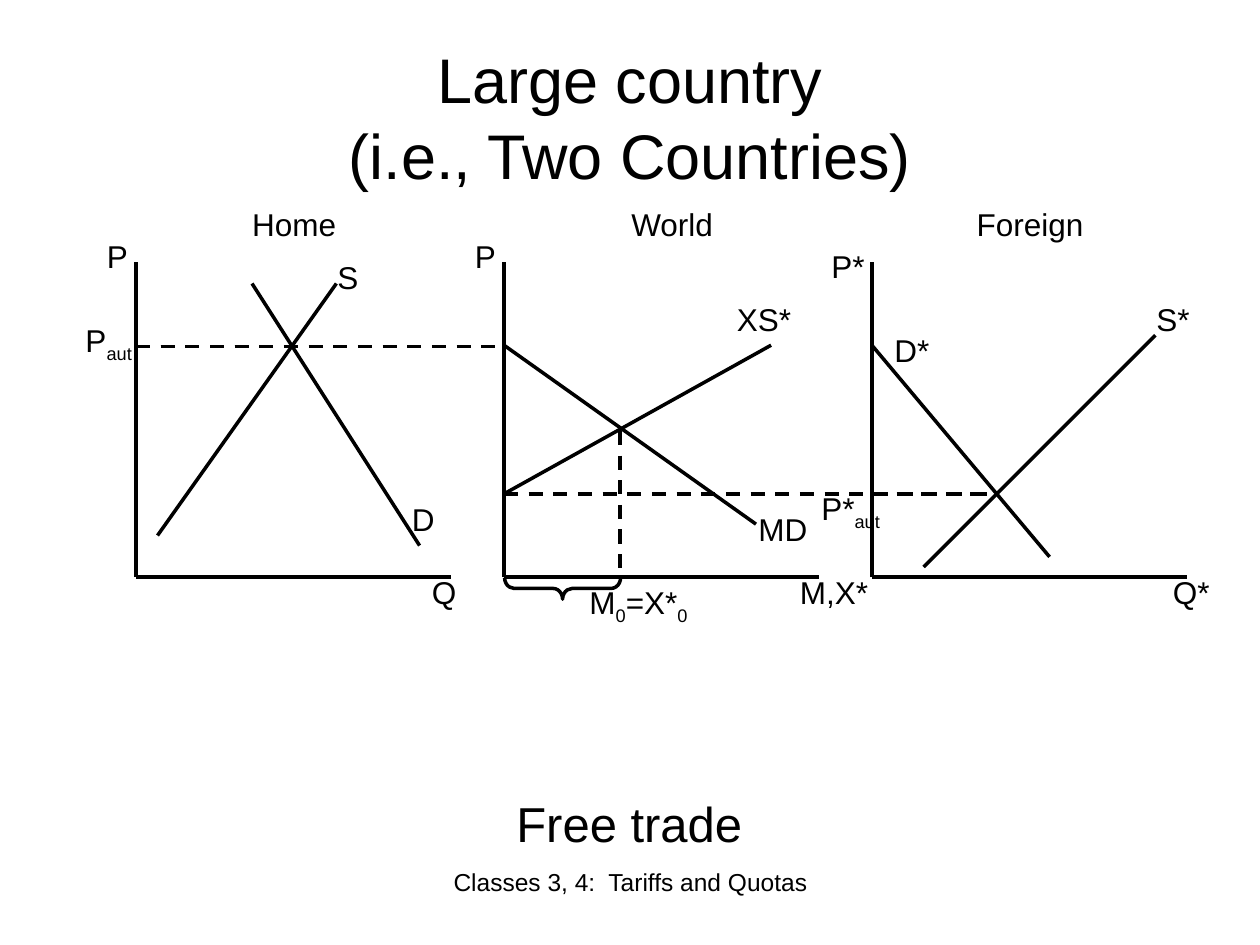
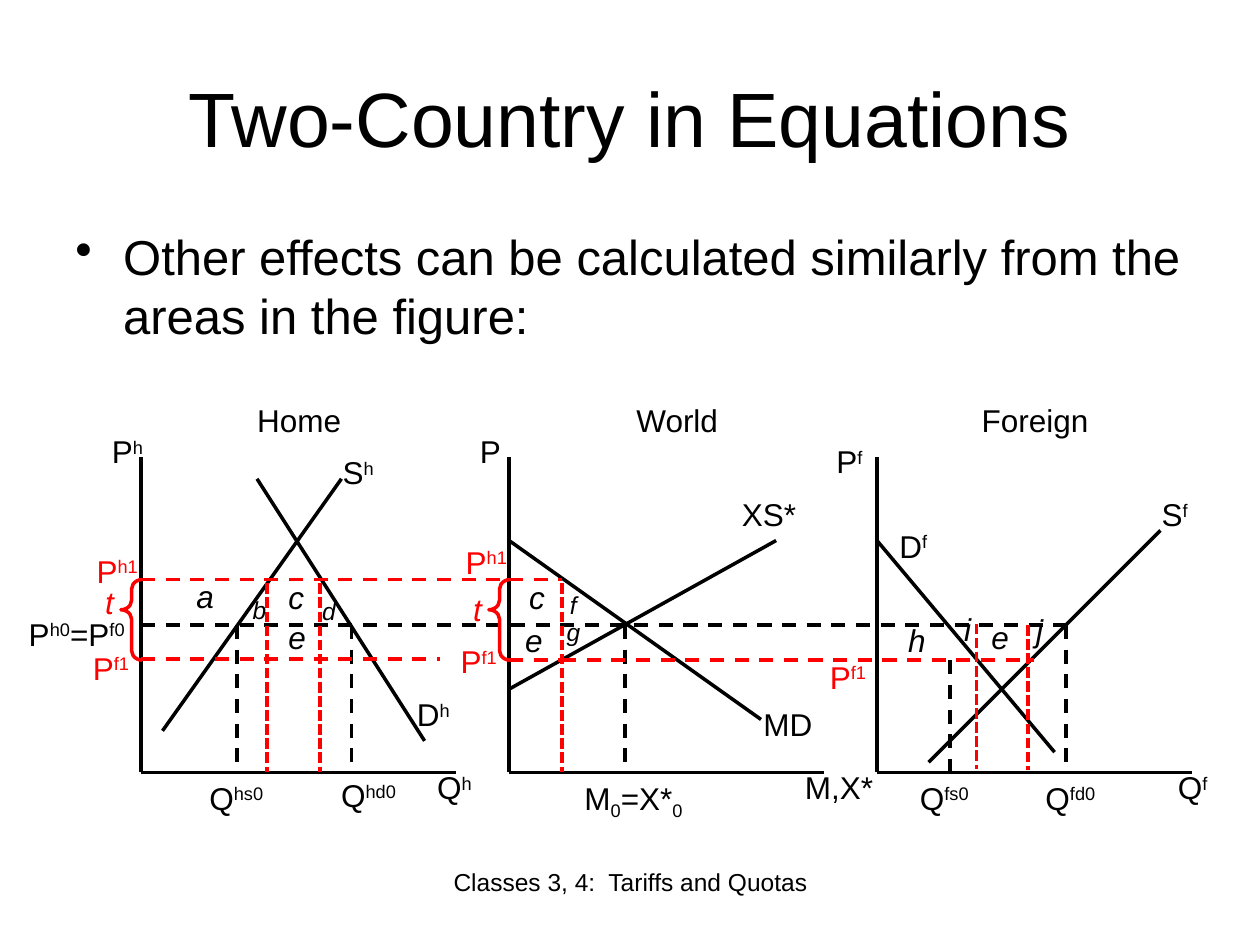
from dataclasses import dataclass

from lxml.etree import SubElement
from pptx import Presentation
from pptx.dml.color import RGBColor
from pptx.enum.dml import MSO_LINE as Dash
from pptx.enum.shapes import MSO_CONNECTOR as Connector, MSO_SHAPE as Shape
from pptx.enum.text import MSO_ANCHOR as Anchor, MSO_AUTO_SIZE as AutoSize, PP_ALIGN as Align
from pptx.oxml.ns import qn
from pptx.util import Inches, Pt


@dataclass(frozen=True)
class Theme:
    """Colours, font and sizes shared by the slides."""
    font: str = "Arial"
    ink: RGBColor = RGBColor(0, 0, 0)
    tariff: RGBColor = RGBColor(255, 0, 0)
    line: float = 2
    title: int = 44
    long_title: int = 36
    body: int = 28
    label: int = 18
    small: int = 14
    subscript: int = -25
    superscript: int = 30


THEME = Theme()
PANEL_PITCH = 2.92
AXIS_LENGTH = 2.5
LABEL_WIDTH, LABEL_HEIGHT = 0.75, 0.4
PANEL_NAMES = ("Home", "World", "Foreign")
CURVES = [
    (0.17, -0.33, 1.59, -2.33),
    (2.25, -0.25, 0.92, -2.33),
    (4.92, -0.42, 2.92, -1.84),
    (2.92, -0.66, 5.04, -1.84),
    (6.25, -0.08, 8.09, -1.92),
    (7.25, -0.16, 5.84, -1.84),
]
LABEL_SPOTS = {
    "home price": (-0.33, -2.75),
    "world price": (2.59, -2.75),
    "foreign price": (5.42, -2.67),
    "home supply": (1.5, -2.58),
    "home demand": (2.09, -0.66),
    "foreign supply": (8, -2.25),
    "foreign demand": (5.92, -2),
    "import demand": (4.84, -0.58),
    "export supply": (4.67, -2.25),
    "home quantity": (2.25, -0.08),
    "world quantity": (5.17, -0.08),
    "foreign quantity": (8.13, -0.08),
}
WORLD_LABELS = {
    "world price": "P",
    "import demand": "MD",
    "export supply": "XS*",
    "world quantity": "M,X*",
}


def write(paragraph, markup, size, color, italic):
    """Write pieces split by |, where _ lowers and ^ raises a piece."""
    shifts = {"_": THEME.subscript, "^": THEME.superscript}
    font_values = {"name": THEME.font, "size": Pt(size), "italic": italic}
    for piece in markup.split("|"):
        if piece == "\n":
            paragraph.add_line_break()
            continue
        run = paragraph.add_run()
        run.text = piece.lstrip("_^")
        for name, value in font_values.items():
            setattr(run.font, name, value)
        run.font.color.rgb = color
        if piece[0] in shifts:
            run._r.get_or_add_rPr().set("baseline", str(shifts[piece[0]] * 1000))


def add_text(slide, markup, box, size=THEME.label, color=THEME.ink, align=Align.LEFT,
             italic=False, **frame_values):
    """Add a text box and return its paragraph."""
    frame = slide.shapes.add_textbox(*map(Inches, box)).text_frame
    for name, value in ({"word_wrap": True} | frame_values).items():
        setattr(frame, name, value)
    paragraph = frame.paragraphs[0]
    paragraph.alignment = align
    write(paragraph, markup, size, color, italic)
    return paragraph


def add_label(slide, markup, x, y, width=LABEL_WIDTH, **text_values):
    """Add a diagram label that grows with its text."""
    add_text(slide, markup, (x, y, width, LABEL_HEIGHT),
             auto_size=AutoSize.SHAPE_TO_FIT_TEXT, **text_values)


def style_line(line, color, dash=None):
    """Give a line its colour, width and dash."""
    line.color.rgb = color
    line.width = Pt(THEME.line)
    if dash:
        line.dash_style = dash


def add_line(slide, ends, color=THEME.ink, dash=None):
    """Add a straight line without a shadow."""
    segment = slide.shapes.add_connector(Connector.STRAIGHT, *map(Inches, ends))
    style_line(segment.line, color, dash)
    SubElement(segment._element.spPr, qn("a:effectLst"))


def add_brace(slide, box, tip, color=THEME.ink, rotation=0):
    """Add a left brace with its tip at a share of its length."""
    brace = slide.shapes.add_shape(Shape.LEFT_BRACE, *map(Inches, box))
    brace.shadow.inherit = False
    brace.fill.background()
    brace.rotation = rotation
    brace.adjustments[0], brace.adjustments[1] = 0.444, tip
    style_line(brace.line, color)


def add_title(slide, markup, size):
    """Add the slide title."""
    add_text(slide, markup, (0.5, 0.3, 9, 1.25), size, align=Align.CENTER,
             vertical_anchor=Anchor.MIDDLE)


def add_bullet(slide, markup):
    """Add the bulleted body text."""
    paragraph = add_text(slide, markup, (0.5, 1.75, 9, 4.95), THEME.body)
    paragraph.space_before = Pt(THEME.body * 0.2)
    properties = paragraph._p.get_or_add_pPr()
    properties.set("marL", str(Inches(0.38)))
    properties.set("indent", str(-Inches(0.38)))
    SubElement(properties, qn("a:buChar")).set("char", "•")


def add_footer(slide):
    """Add the course footer."""
    add_text(slide, "Classes 3, 4:  Tariffs and Quotas", (3.42, 6.83, 3.17, 0.52),
             THEME.small, align=Align.CENTER)


def add_market_panels(slide, left, base, labels):
    """Draw the three markets with their axes, curves and labels."""
    for index, name in enumerate(PANEL_NAMES):
        x = left + index * PANEL_PITCH
        add_line(slide, (x, base, x + AXIS_LENGTH, base))
        add_line(slide, (x, base, x, base - AXIS_LENGTH))
        add_label(slide, name, x + (0.75 if name == "World" else 0.67), base - 3, 1.17,
                  align=Align.CENTER)
    for x1, y1, x2, y2 in CURVES:
        add_line(slide, (left + x1, base + y1, left + x2, base + y2))
    for part, markup in (WORLD_LABELS | labels).items():
        dx, dy = LABEL_SPOTS[part]
        add_label(slide, markup, left + dx, base + dy)


def build_free_trade(slide):
    """Build the free trade slide."""
    add_title(slide, "Large country|\n|(i.e., Two Countries)", THEME.long_title)
    add_text(slide, "Free trade", (4, 6.25, 2.01, 0.57), THEME.body, word_wrap=False)
    add_market_panels(slide, 1.08, 4.58, {
        "home price": "P", "foreign price": "P*",
        "home supply": "S", "home demand": "D",
        "foreign supply": "S*", "foreign demand": "D*",
        "home quantity": "Q", "foreign quantity": "Q*",
    })
    for guide in [(1.08, 2.75, 4, 2.75), (4, 3.92, 7.92, 3.92), (4.92, 3.42, 4.92, 4.58),
                  (1.08, 2.75, 2.33, 2.75), (6.92, 3.92, 7.92, 3.92)]:
        add_line(slide, guide, dash=Dash.DASH)
    add_label(slide, "P|_aut", 0.58, 2.5)
    add_label(slide, "P*|_aut", 6.42, 3.83)
    add_label(slide, "M|_0|=X*|_0", 4.58, 4.58, 1.17)
    add_brace(slide, (4.38, 4.21, 0.17, 0.92), 0.5, rotation=270)
    add_footer(slide)


def add_tariff_prices(slide):
    """Draw the tariff prices, quantities and wedges."""
    for ends in [(1.12, 4.6, 4.04, 4.6), (4.04, 4.6, 4.46, 4.6), (4.04, 5.24, 4.45, 5.24),
                 (4.46, 5.24, 8.21, 5.24), (1.12, 5.23, 3.49, 5.23)]:
        add_line(slide, ends, THEME.tariff, Dash.DASH)
    for x, top, bottom in [(2.12, 4.63, 6.13), (2.54, 4.63, 6.13), (4.46, 4.63, 6.13),
                           (7.75, 4.95, 6.1), (8.16, 4.96, 6.11)]:
        add_line(slide, (x, top, x, bottom), THEME.tariff, Dash.SQUARE_DOT)
    for x in (0.96, 3.88):
        add_brace(slide, (x, 4.6, 0.17, 0.64), 0.375, THEME.tariff)
    for markup, x, y in [("P|^h1", 0.64, 4.33), ("P|^h1", 3.57, 4.26), ("P|^f1", 0.59, 5.1),
                         ("P|^f1", 3.51, 5.05), ("P|^f1", 6.44, 5.17)]:
        add_label(slide, markup, x, y, 0.58, color=THEME.tariff, align=Align.CENTER)
    for x, y in [(0.62, 4.58), (3.54, 4.63)]:
        add_label(slide, "t", x, y, 0.5, color=THEME.tariff, align=Align.CENTER, italic=True)


def add_welfare_areas(slide):
    """Name the welfare areas by their centres."""
    large_areas = [("a", 1.62, 4.53), ("c", 2.35, 4.54), ("e", 2.35, 4.86), ("c", 4.26, 4.54),
                   ("e", 4.23, 4.88), ("h", 7.27, 4.88), ("i", 7.68, 4.79), ("e", 7.93, 4.86),
                   ("j", 8.25, 4.8)]
    small_areas = [("b", 2.06, 4.67), ("d", 2.61, 4.68), ("f", 4.55, 4.63), ("g", 4.55, 4.85)]
    width = 0.32
    for size, areas in ((THEME.label, large_areas), (THEME.small, small_areas)):
        for name, center, y in areas:
            add_label(slide, name, center - width / 2, y, width, size=size,
                      align=Align.CENTER, italic=True)


def build_equations(slide):
    """Build the tariff areas slide."""
    add_title(slide, "Two-Country in Equations", THEME.title)
    add_bullet(slide, "Other effects can be calculated similarly from the areas in the figure:")
    add_market_panels(slide, 1.12, 6.13, {
        "home price": "P|^h", "foreign price": "P|^f",
        "home supply": "S|^h", "home demand": "D|^h",
        "foreign supply": "S|^f", "foreign demand": "D|^f",
        "home quantity": "Q|^h", "foreign quantity": "Q|^f",
    })
    add_line(slide, (1.12, 4.96, 8.46, 4.96), dash=Dash.DASH)
    for x, top in [(1.88, 4.96), (2.79, 4.96), (4.96, 4.96), (7.54, 5.24), (8.46, 4.96)]:
        add_line(slide, (x, top, x, 6.13), dash=Dash.DASH)
    for markup, x, y in [("Q|^hs0", 1.5, 6.13), ("Q|^hd0", 2.55, 6.11),
                         ("Q|^fs0", 7.12, 6.13), ("Q|^fd0", 8.12, 6.13)]:
        add_label(slide, markup, x, y, align=Align.CENTER)
    add_label(slide, "M|_0|=X*|_0", 4.54, 6.13, 1.2)
    add_label(slide, "P|^h0|=P|^f0", 0.13, 4.83, 1.06)
    add_tariff_prices(slide)
    add_welfare_areas(slide)
    add_footer(slide)


def main():
    """Build and save the presentation."""
    deck = Presentation()
    deck.slide_width, deck.slide_height = Inches(10), Inches(7.5)
    for build in (build_free_trade, build_equations):
        build(deck.slides.add_slide(deck.slide_layouts[6]))
    deck.save("out.pptx")


if __name__ == "__main__":
    main()
